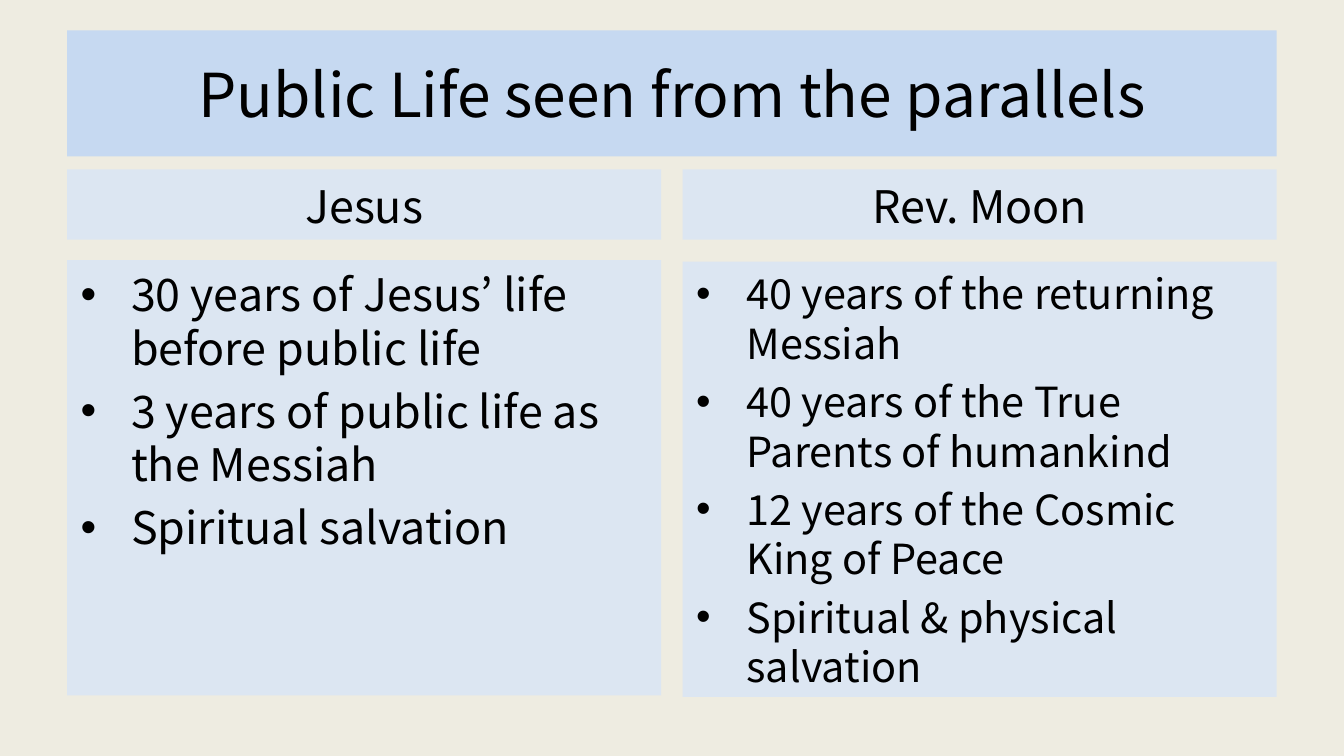
import pptx
import pptx.dml.color
import pptx.enum.text
import pptx.util

COLORS = {"page": "EEECE1", "title": "C6D9F1", "panel": "DCE6F2", "text": "000000"}
FONT = "Noto Sans CJK KR"
WIDTH = pptx.util.Inches(10)
HEIGHT = WIDTH * 9 // 16
MARGIN, COLUMN, STEP = 5, 44.2, 45.8
ALIGN = pptx.enum.text.PP_ALIGN
ANCHOR = pptx.enum.text.MSO_ANCHOR

TITLE = {"size": 32.4, "align": ALIGN.CENTER, "anchor": ANCHOR.MIDDLE, "fill": "title"}
HEADING = {"size": 24, "align": ALIGN.CENTER, "anchor": ANCHOR.BOTTOM, "fill": "panel"}
POINTS = {"size": 24, "align": ALIGN.LEFT, "anchor": ANCHOR.TOP, "fill": "panel"}

LIVES = [
    {
        "name": "Jesus",
        "top": 34.4,
        "size": 24,
        "points": [
            "30 years of Jesus’ life before public life",
            "3 years of public life as the Messiah",
            "Spiritual salvation",
        ],
    },
    {
        "name": "Rev. Moon",
        "top": 34.6,
        "size": 22.2,
        "points": [
            "40 years of the returning Messiah",
            "40 years of the True Parents of humankind",
            "12 years of the Cosmic King of Peace",
            "Spiritual & physical salvation",
        ],
    },
]


def color(name):
    return pptx.dml.color.RGBColor.from_string(COLORS[name])


def apply(target, values):
    for name, value in values.items():
        setattr(target, name, value)


def paint(owner, name):
    owner.fill.solid()
    owner.fill.fore_color.rgb = color(name)


def place(panel, left, top, width, height):
    apply(panel, {
        "left": int(WIDTH * left / 100),
        "top": int(HEIGHT * top / 100),
        "width": int(WIDTH * width / 100),
        "height": int(HEIGHT * height / 100),
    })


def write(panel, lines, style):
    paint(panel, style["fill"])
    frame = panel.text_frame
    frame.text = "\n".join(lines)
    apply(frame, {
        "word_wrap": True,
        "auto_size": pptx.enum.text.MSO_AUTO_SIZE.NONE,
        "vertical_anchor": style["anchor"],
    })
    for position, paragraph in enumerate(frame.paragraphs):
        gap = 0.2 * style["size"] if position else 0
        apply(paragraph, {"alignment": style["align"], "space_before": pptx.util.Pt(gap)})
        for run in paragraph.runs:
            apply(run.font, {
                "name": FONT,
                "size": pptx.util.Pt(style["size"]),
                "bold": False,
            })
            run.font.color.rgb = color("text")


def add_life(heading, points, column, life):
    left = MARGIN + column * STEP
    place(heading, left, 22.4, COLUMN, 9.3)
    write(heading, [life["name"]], HEADING)
    place(points, left, life["top"], COLUMN, 57.6)
    write(points, life["points"], {**POINTS, "size": life["size"]})


def main():
    deck = pptx.Presentation()
    apply(deck, {"slide_width": WIDTH, "slide_height": HEIGHT})
    slide = deck.slides.add_slide(deck.slide_layouts.get_by_name("Comparison"))
    paint(slide.background, "page")

    title, *panels = slide.placeholders
    place(title, MARGIN, 4, 100 - 2 * MARGIN, 16.7)
    write(title, ["Public Life seen from the parallels"], TITLE)
    for column, life in enumerate(LIVES):
        heading, points = panels[2 * column:2 * column + 2]
        add_life(heading, points, column, life)

    deck.save("out.pptx")


if __name__ == "__main__":
    main()
